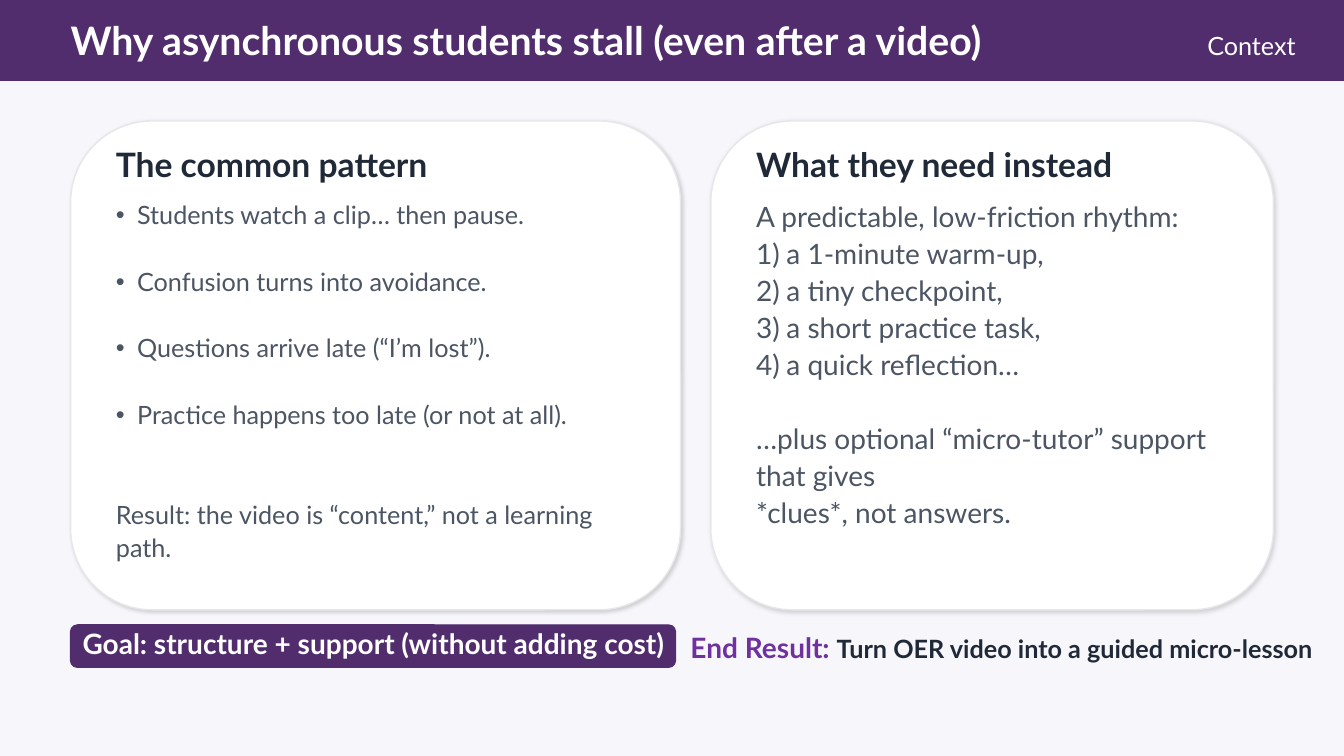
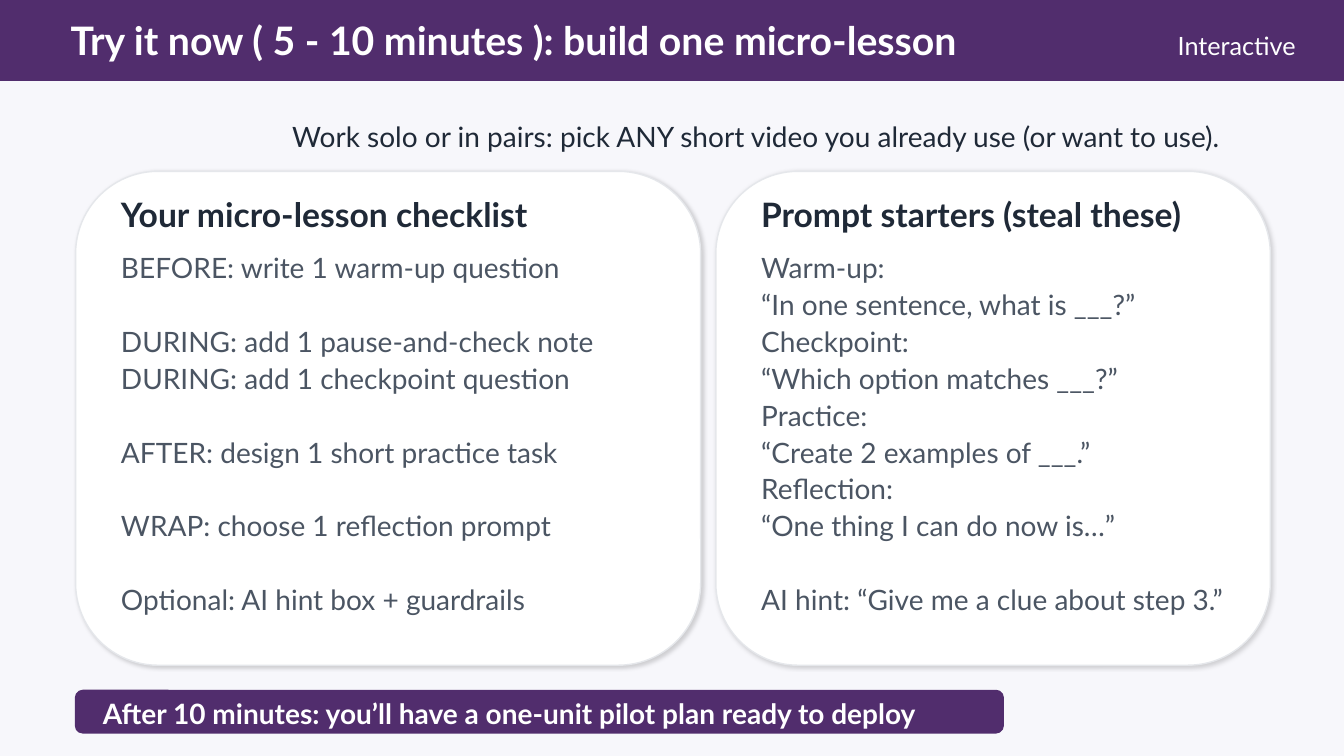
import pptx
import pptx.util
import pptx.oxml.ns
import pptx.dml.color
import pptx.enum.shapes
import pptx.enum.text
import lxml.etree

Inches, Pt = pptx.util.Inches, pptx.util.Pt
SHAPE = pptx.enum.shapes.MSO_SHAPE
ANCHOR = pptx.enum.text.MSO_ANCHOR
ALIGN = pptx.enum.text.PP_ALIGN
qn = pptx.oxml.ns.qn
rgb = pptx.dml.color.RGBColor.from_string

FONT = "Lato"
COLORS = {
    "page": "F7F7FB", "purple": "512D6D", "accent": "7030A0", "white": "FFFFFF",
    "border": "E5E7EB", "heading": "1F2937", "body": "4B5563", "shadow": "000000",
}
# Paragraph marks: bullet tag, its attributes, hanging indent in inches
MARKS = {
    "dot": ("a:buChar", {"char": "•"}, 0.21),
    "number": ("a:buAutoNum", {"type": "arabicParenR"}, 0.3),
    None: ("a:buNone", {}, 0),
}


def write(frame, text, size=20, color="body", bold=False, align=ALIGN.LEFT, anchor=ANCHOR.MIDDLE,
          mark=None, spacing=1.0, before=0, same_line=False, wrap=True):
    """Add text to a frame, as a new paragraph unless same_line is set."""
    frame.word_wrap = wrap
    frame.auto_size = pptx.enum.text.MSO_AUTO_SIZE.NONE
    frame.vertical_anchor = anchor
    paragraph = frame.paragraphs[-1]
    if frame.text and not same_line:
        paragraph = frame.add_paragraph()
    if not same_line:
        tag, attributes, indent = MARKS[mark]
        properties = paragraph._p.get_or_add_pPr()
        properties.set("marL", str(Inches(indent)))
        properties.set("indent", str(-Inches(indent)))
        lxml.etree.SubElement(properties, qn(tag), attributes)
        paragraph.alignment = align
        paragraph.line_spacing = spacing
        paragraph.space_before = Pt(before)
        paragraph.space_after = Pt(0)
    run = paragraph.add_run()
    run.text = text
    run.font.name, run.font.size, run.font.bold = FONT, Pt(size), bold
    run.font.color.rgb = rgb(COLORS[color])


def add_panel(slide, preset, box, fill, line):
    panel = slide.shapes.add_shape(preset, *map(Inches, box))
    panel.shadow.inherit = False
    panel.fill.solid()
    panel.fill.fore_color.rgb = rgb(COLORS[fill])
    panel.line.color.rgb = rgb(COLORS[line])
    panel.line.width = Pt(1)
    return panel


# Content: each card line is (text, mark, blank lines' worth of space above)
lessons = [
    {
        "title": "Why asynchronous students stall (even after a video)",
        "tag": "Context",
        "card_top": 1.2, "card_height": 4.85,
        "cards": [
            (0.7, 6.05, "The common pattern", 18, [
                ("Students watch a clip… then pause.", "dot", 0),
                ("Confusion turns into avoidance.", "dot", 1),
                ("Questions arrive late (“I’m lost”).", "dot", 1),
                ("Practice happens too late (or not at all).", "dot", 1),
                ("Result: the video is “content,” not a learning path.", None, 2),
            ]),
            (7.05, 5.58, "What they need instead", 20, [
                ("A predictable, low-friction rhythm:", None, 0),
                ("a 1-minute warm-up,", "number", 0),
                ("a tiny checkpoint,", "number", 0),
                ("a short practice task,", "number", 0),
                ("a quick reflection…", "number", 0),
                ("…plus optional “micro-tutor” support that gives", None, 1),
                ("*clues*, not answers.", None, 0),
            ]),
        ],
        "takeaway": "Goal: structure + support (without adding cost)",
        "takeaway_box": (0.7, 6.2, 6, 0.42), "takeaway_insets": (0.1, 0),
    },
    {
        "title": "Try it now ( 5 - 10 minutes ): build one micro-lesson",
        "tag": "Interactive",
        "card_top": 1.7, "card_height": 4.9,
        "cards": [
            (0.75, 6.2, "Your micro-lesson checklist", 20, [
                ("BEFORE: write 1 warm-up question", None, 0),
                ("DURING: add 1 pause-and-check note", None, 1),
                ("DURING: add 1 checkpoint question", None, 0),
                ("AFTER: design 1 short practice task", None, 1),
                ("WRAP: choose 1 reflection prompt", None, 1),
                ("Optional: AI hint box + guardrails", None, 1),
            ]),
            (7.1, 5.5, "Prompt starters (steal these)", 20, [
                ("Warm-up:", None, 0),
                ("“In one sentence, what is ___?”", None, 0),
                ("Checkpoint:", None, 0),
                ("“Which option matches ___?”", None, 0),
                ("Practice:", None, 0),
                ("“Create 2 examples of ___.”", None, 0),
                ("Reflection:", None, 0),
                ("“One thing I can do now is…”", None, 0),
                ("AI hint: “Give me a clue about step 3.”", None, 1),
            ]),
        ],
        "takeaway": "After 10 minutes: you’ll have a one-unit pilot plan ready to deploy",
        "takeaway_box": (0.75, 6.85, 9.2, 0.42), "takeaway_insets": (0.25, 0.09),
    },
]

prs = pptx.Presentation()
prs.slide_width, prs.slide_height = Inches(13.33), Inches(7.5)

# Shared layout: background, title position and header band
layout = prs.slide_layouts.get_by_name("Two Content")
layout.background.fill.solid()
layout.background.fill.fore_color.rgb = rgb(COLORS["page"])
header = layout.placeholders[0]
header.left, header.top, header.width, header.height = map(Inches, (0.6, 0.14, 9.25, 0.5))
slides = [prs.slides.add_slide(layout) for lesson in lessons]
band = add_panel(slides[0], SHAPE.RECTANGLE, (0, 0, 13.33, 0.8), "purple", "purple")
band._element.nvSpPr.cNvPr.set("id", "20")
layout.shapes._spTree.insert(2, band._element)

for slide, lesson in zip(slides, lessons):
    # Header text
    write(slide.shapes.title.text_frame, lesson["title"], size=28, color="white", bold=True)
    tag_box = slide.shapes.add_textbox(*map(Inches, (9.95, 0.2, 3, 0.5)))
    write(tag_box.text_frame, lesson["tag"], size=18, color="white", align=ALIGN.RIGHT)

    # Cards, placed behind the body placeholders
    top, height = lesson["card_top"], lesson["card_height"]
    for column, (left, width, heading, size, lines) in enumerate(lesson["cards"], start=1):
        card = add_panel(slide, SHAPE.ROUNDED_RECTANGLE, (left, top, width, height), "white", "border")
        shadow = lxml.etree.SubElement(
            card._element.spPr.find(qn("a:effectLst")), qn("a:outerShdw"),
            {"blurRad": str(Pt(3)), "dist": str(Pt(1.5)), "dir": str(45 * 60000)})
        shadow_color = lxml.etree.SubElement(shadow, qn("a:srgbClr"), {"val": COLORS["shadow"]})
        lxml.etree.SubElement(shadow_color, qn("a:alpha"), {"val": "16000"})
        slide.shapes._spTree.insert(2, card._element)

        heading_box = slide.shapes.add_textbox(
            *map(Inches, (left + 0.35, top + 0.25, width - 0.7, 0.35)))
        write(heading_box.text_frame, heading, size=24, color="heading", bold=True)

        body = slide.placeholders[column]
        body.left, body.top, body.width, body.height = map(
            Inches, (left + 0.35, top + 0.7, width - 0.7, height - 0.95))
        for text, mark, blank_lines in lines:
            write(body.text_frame, text, size=size, mark=mark, anchor=ANCHOR.TOP,
                  spacing=1.1, before=round(blank_lines * size * 1.32, 1))

    # Takeaway bar
    takeaway = add_panel(slide, SHAPE.ROUNDED_RECTANGLE, lesson["takeaway_box"], "purple", "purple")
    takeaway.text_frame.margin_left, takeaway.text_frame.margin_top = map(
        Inches, lesson["takeaway_insets"])
    write(takeaway.text_frame, lesson["takeaway"], color="white", bold=True, wrap=False)

# End result, beside the first takeaway
end_result = slides[0].shapes.add_textbox(*map(Inches, (6.75, 6.2, 6.58, 0.44)))
write(end_result.text_frame, "End Result: ", color="accent", bold=True)
write(end_result.text_frame, "Turn OER video into a guided micro-lesson",
      size=18, color="heading", bold=True, same_line=True)

# Invitation above the second slide's cards
invitation = slides[1].shapes.add_textbox(*map(Inches, (2.8, 1.1, 10, 0.5)))
write(invitation.text_frame,
      "Work solo or in pairs: pick ANY short video you already use (or want to use).",
      color="heading")

prs.save("out.pptx")
